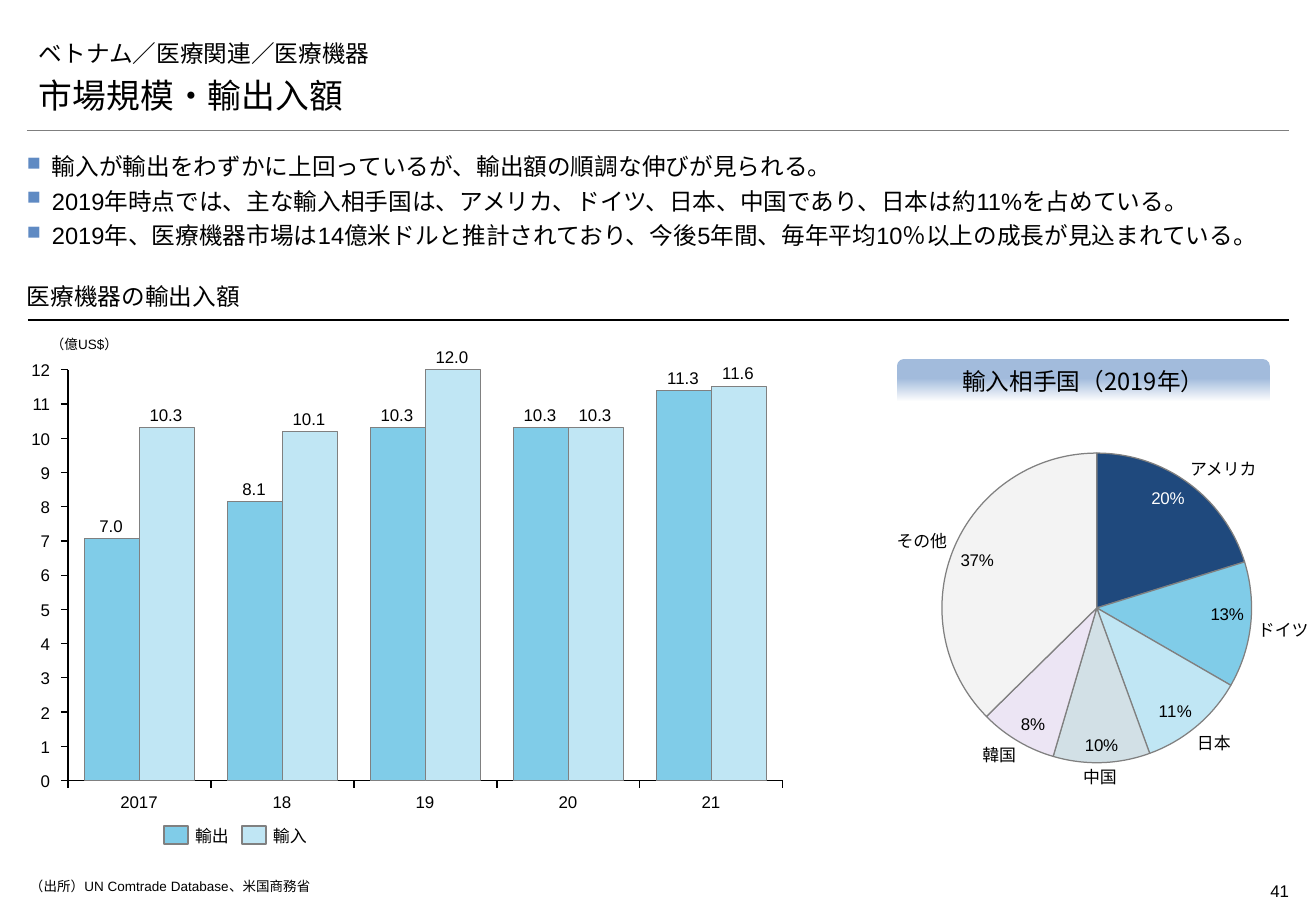
from pptx import Presentation
from pptx.chart.data import CategoryChartData
from pptx.dml.color import RGBColor
from pptx.enum.chart import XL_CHART_TYPE, XL_LABEL_POSITION, XL_TICK_LABEL_POSITION, XL_TICK_MARK
from pptx.enum.shapes import MSO_CONNECTOR, MSO_SHAPE
from pptx.enum.text import MSO_ANCHOR, PP_ALIGN
from pptx.oxml import parse_xml
from pptx.oxml.ns import nsdecls, qn
from pptx.util import Pt

PX = 7526  # EMU per pixel, 121.5 pixels to the inch
LEFT, CENTER, RIGHT, JUSTIFY = PP_ALIGN.LEFT, PP_ALIGN.CENTER, PP_ALIGN.RIGHT, PP_ALIGN.JUSTIFY
TOP, MIDDLE, BOTTOM = MSO_ANCHOR.TOP, MSO_ANCHOR.MIDDLE, MSO_ANCHOR.BOTTOM
NO_LABELS, OUTSIDE = XL_TICK_LABEL_POSITION.NONE, XL_TICK_MARK.OUTSIDE
INSIDE_END = XL_LABEL_POSITION.INSIDE_END
CJK, HEADING = "Noto Sans CJK JP", "Montserrat"
BLACK, GRAY, EXPORT, IMPORT = "000000", "808080", "80CCE8", "C0E6F4"
rgb = RGBColor.from_string

deck = Presentation()
deck.slide_width, deck.slide_height = 1316 * PX, 911 * PX
page = deck.slides.add_slide(deck.slide_layouts[6])


def write(frame, text, size=10, font="Arial", align=LEFT, anchor=MIDDLE, insets=(0, 0, 0, 0), wrap=False):
    """Fill a text frame, one paragraph per line; insets are left, top, right, bottom in px."""
    frame.text = text
    frame.word_wrap = wrap
    frame.vertical_anchor = anchor
    frame.margin_left, frame.margin_top, frame.margin_right, frame.margin_bottom = [i * PX for i in insets]
    for para in frame.paragraphs:
        para.alignment = align
        for span in para.runs:
            span.font.size = Pt(size)
            span.font.name = font
            span.font.color.rgb = rgb(BLACK)
            if font == HEADING:
                span._r.get_or_add_rPr().append(parse_xml(f'<a:ea {nsdecls("a")} typeface="{font}"/>'))


def prepare_chart(chart, x, y, w, h):
    """Set the chart's font and its inner plot area as fractions of the chart."""
    chart.has_legend = False
    chart.has_title = False
    chart.font.size = Pt(10)
    chart.font.name = "Arial"
    chart.font.color.rgb = rgb(BLACK)
    area = chart.element.find(".//" + qn("c:plotArea"))
    for old in area.findall(qn("c:layout")):
        area.remove(old)
    area.insert(0, parse_xml(
        f'<c:layout {nsdecls("c")}><c:manualLayout><c:layoutTarget val="inner"/>'
        '<c:xMode val="edge"/><c:yMode val="edge"/>'
        f'<c:x val="{x}"/><c:y val="{y}"/><c:w val="{w}"/><c:h val="{h}"/>'
        '</c:manualLayout></c:layout>'))


# Headings, unit, source and page number
INSET = (12, 6, 12, 6)
for x, y, w, h, text, size, font, align, anchor, insets in [
    (27, 32, 1262, 41, "ベトナム／医療関連／医療機器", 14, CJK, LEFT, BOTTOM, INSET),
    (27, 68, 1262, 53, "市場規模・輸出入額", 20, HEADING, LEFT, BOTTOM, INSET),
    (27, 282, 1262, 38, "医療機器の輸出入額", 14, HEADING, LEFT, BOTTOM, (0, 6, 0, 10)),
    (51, 330, 91, 29, "（億US$）", 8, "Arial", LEFT, MIDDLE, (0, 0, 0, 0)),
    (30, 878, 909, 29, "（出所）UN Comtrade Database、米国商務省", 8, "Arial", LEFT, TOP, (0, 0, 0, 0)),
    (1193, 875, 96, 33, "41", 10, "Arial", RIGHT, TOP, (0, 6, 0, 6)),
]:
    box = page.shapes.add_textbox(x * PX, y * PX, w * PX, h * PX)
    write(box.text_frame, text, size, font, align, anchor, insets, wrap=True)

for x, y, color, width in [(27, 130, "7F7F7F", 0.25), (28, 320, BLACK, 0.75)]:
    rule = page.shapes.add_connector(MSO_CONNECTOR.STRAIGHT, x * PX, y * PX, 1289 * PX, y * PX)
    rule.line.color.rgb = rgb(color)
    rule.line.width = Pt(width)
    rule.element.spPr.append(parse_xml(f'<a:effectLst {nsdecls("a")}/>'))

# Key messages
messages = page.shapes.add_textbox(27 * PX, 149 * PX, 1263 * PX, 98 * PX)
write(messages.text_frame, "\n".join([
    "輸入が輸出をわずかに上回っているが、輸出額の順調な伸びが見られる。",
    "2019年時点では、主な輸入相手国は、アメリカ、ドイツ、日本、中国であり、日本は約11%を占めている。",
    "2019年、医療機器市場は14億米ドルと推計されており、今後5年間、毎年平均10％以上の成長が見込まれている。",
]), 14, align=JUSTIFY, anchor=TOP, wrap=True)
for para in messages.text_frame.paragraphs:
    para.line_spacing = 1.1
    para.space_after = Pt(2)
    props = para._p.get_or_add_pPr()
    props.set("marL", str(25 * PX))
    props.set("indent", str(-25 * PX))
    props.append(parse_xml(f'<a:buClr {nsdecls("a")}><a:srgbClr val="5F8AC3"/></a:buClr>'))
    props.append(parse_xml(f'<a:buSzPct {nsdecls("a")} val="80000"/>'))
    props.append(parse_xml(f'<a:buChar {nsdecls("a")} char="■"/>'))

# Trade chart: bar heights are percentages of the 12 top mark
YEARS = ["2017", "18", "19", "20", "21"]
TRADE = [
    ("輸出", EXPORT, [59, 68, 86, 86, 95], ["7.0", "8.1", "10.3", "10.3", "11.3"]),
    ("輸入", IMPORT, [86, 85, 100, 86, 96], ["10.3", "10.1", "12.0", "10.3", "11.6"]),
]
TOP_MARK = 12
data = CategoryChartData()
data.categories = YEARS
for name, color, heights, labels in TRADE:
    data.add_series(name, heights)
trade = page.shapes.add_chart(XL_CHART_TYPE.COLUMN_CLUSTERED, 57 * PX, 359 * PX, 737 * PX, 433 * PX, data).chart
prepare_chart(trade, 0.015, 0.025, 0.97, 0.949)
trade.plots[0].gap_width = 60
trade.plots[0].overlap = 0
trade.plots[0].vary_by_categories = False
for axis in (trade.category_axis, trade.value_axis):
    axis.has_major_gridlines = False
    axis.tick_label_position = NO_LABELS
    axis.major_tick_mark = OUTSIDE
    axis.format.line.color.rgb = rgb(BLACK)
    axis.format.line.width = Pt(0.75)
trade.value_axis.minimum_scale = 0
trade.value_axis.maximum_scale = 100
trade.value_axis.major_unit = 100 / TOP_MARK
for series, (name, color, heights, labels) in zip(trade.plots[0].series, TRADE):
    series.format.fill.solid()
    series.format.fill.fore_color.rgb = rgb(color)
    series.format.line.color.rgb = rgb(GRAY)
    series.format.line.width = Pt(0.75)

PLOT_LEFT, BASE, PLOT_HEIGHT, YEAR_STEP, BAR = 68, 781, 411, 143, 55
for mark in range(TOP_MARK + 1):
    y = BASE - round(mark * PLOT_HEIGHT / TOP_MARK)
    box = page.shapes.add_textbox(31 * PX, (y - 10) * PX, 19 * PX, 20 * PX)
    write(box.text_frame, str(mark), align=RIGHT)
for i, year in enumerate(YEARS):
    middle = PLOT_LEFT + i * YEAR_STEP + YEAR_STEP // 2
    box = page.shapes.add_textbox((middle - 20) * PX, 792 * PX, 40 * PX, 20 * PX)
    write(box.text_frame, year, align=CENTER, anchor=TOP)
    for side, (name, color, heights, labels) in zip((-1, 1), TRADE):
        x = middle + side * BAR // 2
        y = BASE - round(heights[i] / 100 * PLOT_HEIGHT) - 3
        box = page.shapes.add_textbox((x - 19) * PX, (y - 20) * PX, 38 * PX, 20 * PX)
        write(box.text_frame, labels[i], align=CENTER, anchor=BOTTOM)

for i, (name, color, heights, labels) in enumerate(TRADE):
    x = 164 + i * 78
    swatch = page.shapes.add_shape(MSO_SHAPE.RECTANGLE, x * PX, 826 * PX, 24 * PX, 18 * PX)
    swatch.shadow.inherit = False
    swatch.fill.solid()
    swatch.fill.fore_color.rgb = rgb(color)
    swatch.line.color.rgb = rgb(GRAY)
    swatch.line.width = Pt(0.75)
    box = page.shapes.add_textbox((x + 31) * PX, 826 * PX, 34 * PX, 20 * PX)
    write(box.text_frame, name)

# Import partners
banner = page.shapes.add_shape(MSO_SHAPE.ROUND_2_SAME_RECTANGLE, 897 * PX, 359 * PX, 373 * PX, 43 * PX)
banner.shadow.inherit = False
banner.line.fill.background()
banner.fill.gradient()
banner.fill.gradient_angle = 270
for stop, position, color in zip(banner.fill.gradient_stops, (0.45, 1), ("A2BBDC", "FFFFFF")):
    stop.position = position
    stop.color.rgb = rgb(color)
write(banner.text_frame, "輸入相手国（2019年）", 14, CJK, CENTER, MIDDLE, INSET, wrap=True)

PARTNERS = [  # name, share, slice colour, label colour, label left, top, width, alignment
    ("アメリカ", 20, "1F497D", "FFFFFF", 1190, 459, 70, LEFT),
    ("ドイツ", 13, EXPORT, BLACK, 1258, 620, 54, LEFT),
    ("日本", 11, IMPORT, BLACK, 1197, 733, 34, LEFT),
    ("中国", 10, "D2E0E6", BLACK, 1083, 767, 34, LEFT),
    ("韓国", 8, "ECE5F4", BLACK, 982, 745, 34, RIGHT),
    ("その他", 37, "F3F3F3", BLACK, 893, 531, 54, RIGHT),
]
data = CategoryChartData(number_format='0"%"')
data.categories = [partner[0] for partner in PARTNERS]
data.add_series("輸入相手国", [partner[1] for partner in PARTNERS])
pie = page.shapes.add_chart(XL_CHART_TYPE.PIE, 931 * PX, 442 * PX, 333 * PX, 332 * PX, data).chart
prepare_chart(pie, 0.033, 0.033, 0.93, 0.934)
shares = pie.plots[0].series[0]
values = shares.data_labels
values.show_value = True
values.number_format = '0"%"'
values.number_format_is_linked = False
values.position = INSIDE_END
for i, (name, share, color, label_color, x, y, w, align) in enumerate(PARTNERS):
    point = shares.points[i]
    point.format.fill.solid()
    point.format.fill.fore_color.rgb = rgb(color)
    point.format.line.color.rgb = rgb(GRAY)
    point.format.line.width = Pt(0.75)
    label = point.data_label
    label.font.size = Pt(10)
    label.font.color.rgb = rgb(label_color)
    label.position = INSIDE_END
    box = page.shapes.add_textbox(x * PX, y * PX, w * PX, 20 * PX)
    write(box.text_frame, name, align=align)

deck.save("out.pptx")
